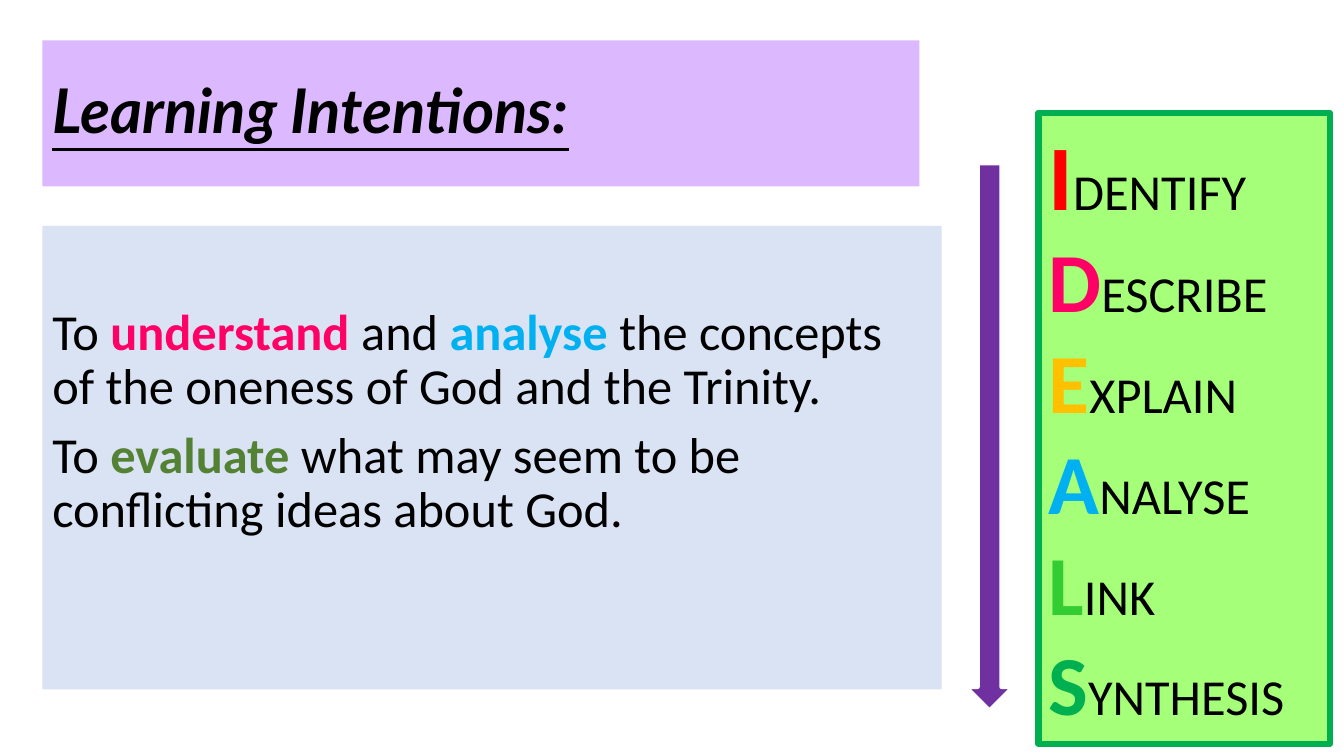
from pptx import Presentation
from pptx.dml.color import RGBColor
from pptx.enum.shapes import MSO_SHAPE
from pptx.enum.text import MSO_ANCHOR, PP_ALIGN
from pptx.util import Inches, Pt

RECT, DOWN_ARROW = MSO_SHAPE.RECTANGLE, MSO_SHAPE.DOWN_ARROW
MIDDLE, TOP = MSO_ANCHOR.MIDDLE, MSO_ANCHOR.TOP
LEFT = PP_ALIGN.LEFT

COLORS = {
    "black": "000000", "white": "FFFFFF", "lilac": "DCB9FF", "pale blue": "DAE3F3",
    "purple": "7030A0", "lime": "A6FF79", "green": "00B050", "red": "FF0000",
    "pink": "FF0066", "amber": "FFC000", "blue": "00B0F0", "olive": "548235",
    "leaf": "33CC33",
}


def rgb(name):
    return RGBColor.from_string(COLORS[name])


def add_run(p, text, color, size, bold):
    r = p.add_run()
    r.text = text
    r.font.name = "Calibri"
    r.font.size = Pt(size)
    r.font.bold = bold
    r.font.color.rgb = rgb(color)


prs = Presentation()
prs.slide_width, prs.slide_height = Inches(13.33), Inches(7.5)
s = prs.slides.add_slide(prs.slide_layouts[5])

# Title
title = s.shapes.title
title.left, title.top = Inches(0.42), Inches(0.4)
title.width, title.height = Inches(8.7), Inches(1.45)
title.fill.solid()
title.fill.fore_color.rgb = rgb("lilac")
tf = title.text_frame
tf.text = "Learning Intentions:"
tf.vertical_anchor = MIDDLE
p = tf.paragraphs[0]
p.alignment = LEFT
p.line_spacing = 0.9
p.font.name = "Lato"
p.font.size = Pt(44)
p.font.bold = p.font.italic = p.font.underline = True
p.font.color.rgb = rgb("black")

# Panels and arrow: kind, place, fill, line colour, line width
panels = [
    (RECT, (0.42, 2.24, 8.92, 4.6), "pale blue", None, 0),
    (DOWN_ARROW, (9.58, 1.62, 0.47, 5.43), "purple", "white", 3),
    (RECT, (10.3, 1.12, 2.89, 6.26), "lime", "green", 4.5),
]
shapes = []
for kind, place, fill, line, width in panels:
    sp = s.shapes.add_shape(kind, *map(Inches, place))
    sp.shadow.inherit = False
    sp.fill.solid()
    sp.fill.fore_color.rgb = rgb(fill)
    if line:
        sp.line.color.rgb = rgb(line)
        sp.line.width = Pt(width)
    else:
        sp.line.fill.background()
    shapes.append(sp)
intentions, arrow, ideals = shapes

# Learning intentions, with the key verbs in colour
sentences = [
    [("To ", "black"), ("understand", "pink"), (" and ", "black"), ("analyse", "blue"),
     (" the concepts of the oneness of God and the Trinity.", "black")],
    [("To ", "black"), ("evaluate ", "olive"),
     ("what may seem to be conflicting ideas about God.", "black")],
]
tf = intentions.text_frame
tf.word_wrap = True
tf.vertical_anchor = MIDDLE
tf.margin_bottom = Inches(0.74)
for i, sentence in enumerate(sentences):
    p = tf.add_paragraph() if i else tf.paragraphs[0]
    p.alignment = LEFT
    p.line_spacing = 0.9
    if i:
        p.space_before = Pt(10)
    for text, color in sentence:
        add_run(p, text, color, 36, color != "black")

# IDEALS acronym
words = [
    ("IDENTIFY", "red", 66), ("DESCRIBE", "pink", 60), ("EXPLAIN", "amber", 60),
    ("ANALYSE", "blue", 60), ("LINK", "leaf", 60), ("SYNTHESIS", "green", 60),
]
tf = ideals.text_frame
tf.word_wrap = True
tf.vertical_anchor = TOP
for i, (word, color, size) in enumerate(words):
    p = tf.add_paragraph() if i else tf.paragraphs[0]
    p.alignment = LEFT
    add_run(p, word[0], color, size, True)
    add_run(p, word[1:], "black", 36, False)

prs.save("out.pptx")
